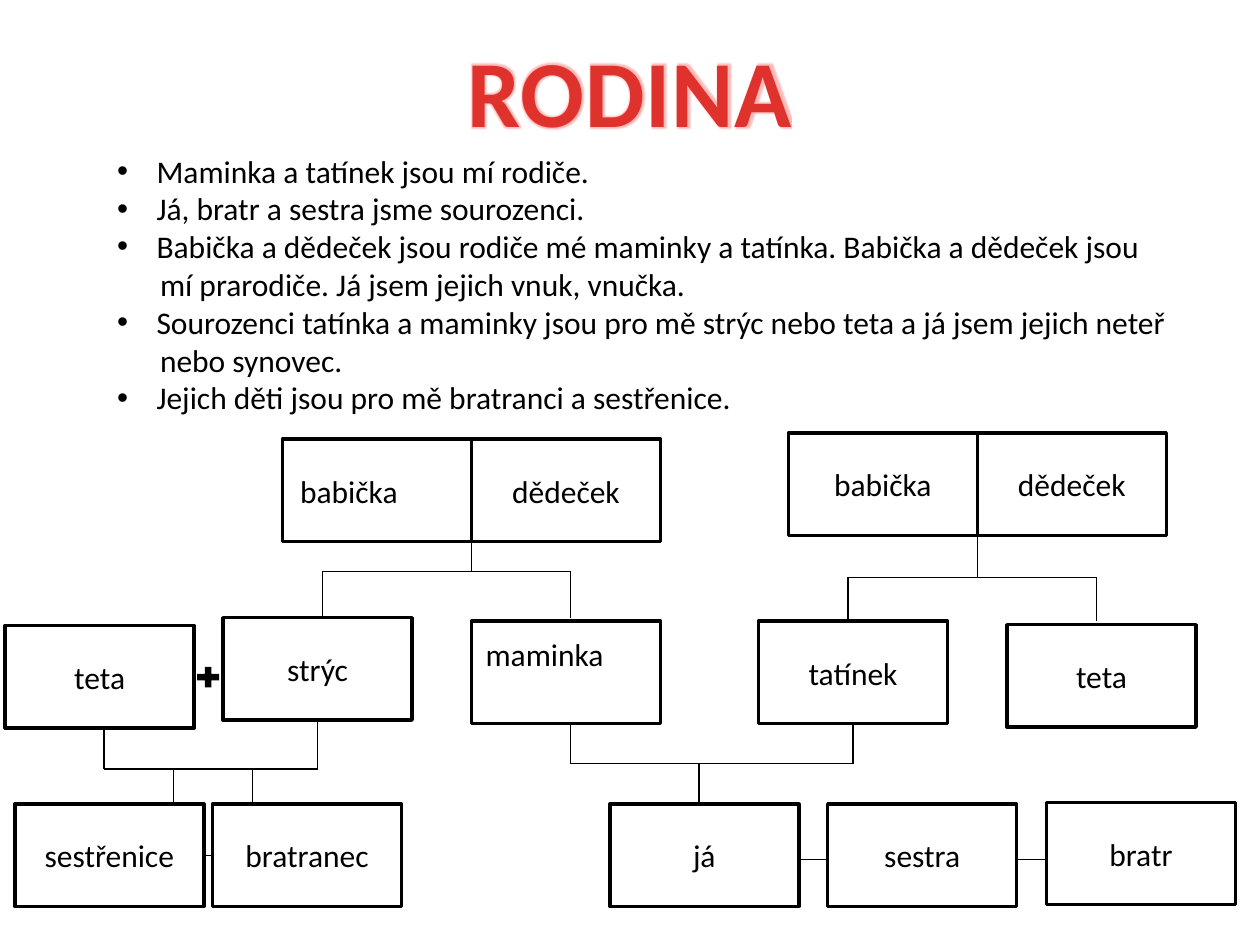
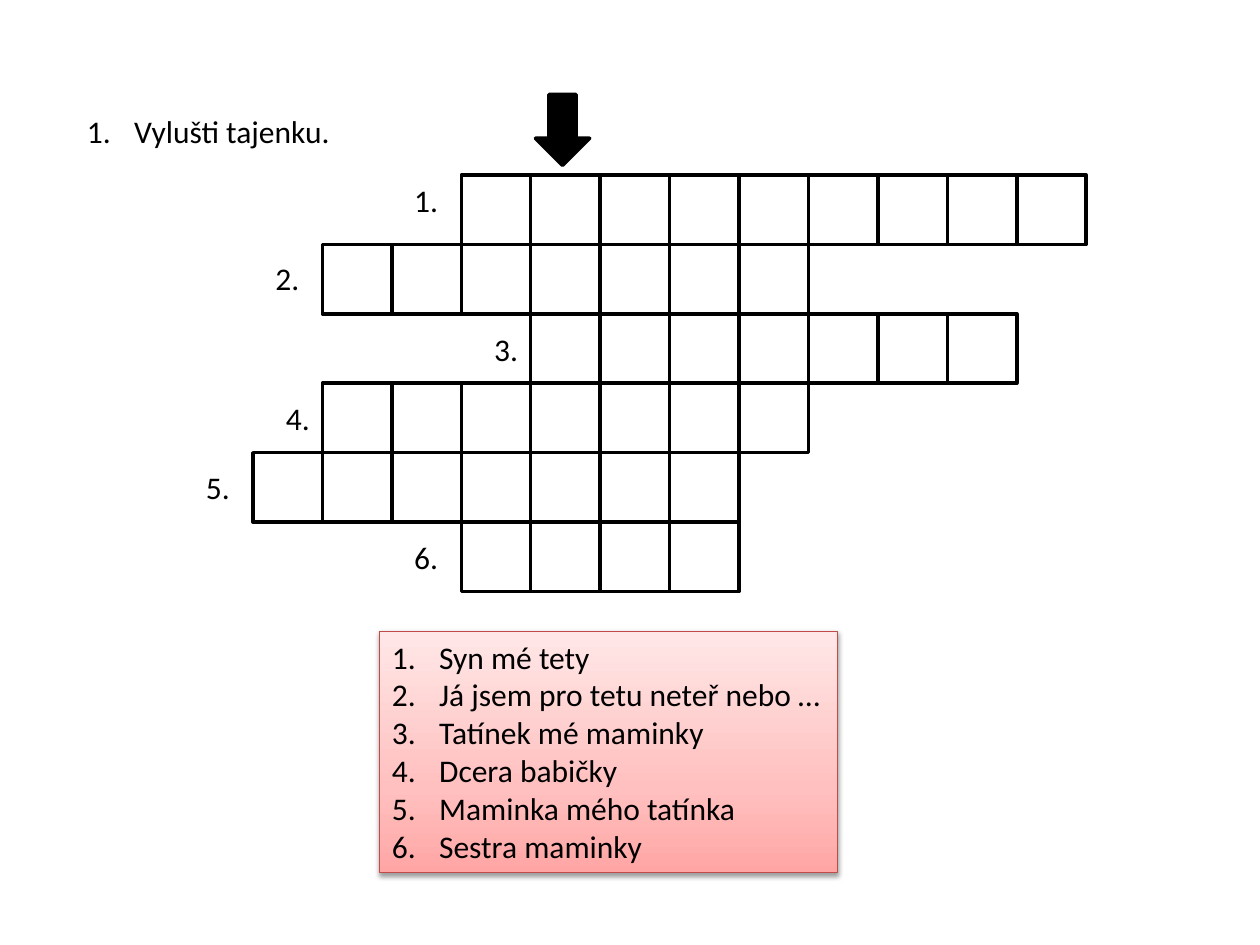
from lxml.etree import SubElement
from pptx import Presentation
from pptx.dml.color import RGBColor
from pptx.enum.shapes import MSO_CONNECTOR, MSO_SHAPE
from pptx.enum.text import MSO_ANCHOR, MSO_AUTO_SIZE, PP_ALIGN
from pptx.oxml.ns import qn
from pptx.util import Pt

INK = {"black": "000000", "white": "FFFFFF", "red": "E0322D", "dark": "A2201C",
       "glow": "FF3A33", "rose": "FFA6A5", "pink": "FFC0BF", "pale": "FFE7E7",
       "edge": "BF4C48"}


class Deck:
    """Holds the shared style and the current slide."""

    def __init__(self):
        self.prs = Presentation()
        self.prs.slide_width, self.prs.slide_height = Pt(720), Pt(540)
        self.font, self.size = "Calibri", 18
        self.slide = None

    def page(self):
        self.slide = self.prs.slides.add_slide(self.prs.slide_layouts[1])

    def tint(self, name):
        return RGBColor.from_string(INK[name])

    def place(self, shape, x, y, w, h):
        shape.left, shape.top, shape.width, shape.height = Pt(x), Pt(y), Pt(w), Pt(h)

    def letter(self, shape, lines, align=PP_ALIGN.LEFT, anchor=MSO_ANCHOR.TOP,
               size=None, bold=False):
        frame = shape.text_frame
        frame.text = "\n".join(lines)
        frame.word_wrap = True
        frame.auto_size = MSO_AUTO_SIZE.NONE
        frame.vertical_anchor = anchor
        for par in frame.paragraphs:
            par.alignment = align
            par.space_before = Pt(0)
            for run in par.runs:
                run.font.name = self.font
                run.font.size = Pt(size or self.size)
                run.font.bold = bold
                run.font.color.rgb = self.tint("black")
        return frame

    def mark(self, par, indent, kind=None):
        props = par._p.get_or_add_pPr()
        props.set("marL", str(Pt(indent)))
        props.set("indent", str(-Pt(indent) if kind else 0))
        if kind == "dot":
            SubElement(props, qn("a:buFont"), typeface="Arial")
            SubElement(props, qn("a:buChar"), char="•")
        elif kind == "count":
            SubElement(props, qn("a:buFont"), typeface="+mj-lt")
            SubElement(props, qn("a:buAutoNum"), type="arabicPeriod")
        else:
            SubElement(props, qn("a:buNone"))

    def blend(self, fill, props, stops, angle):
        fill.gradient()
        fill.gradient_angle = angle
        grad = props.find(qn("a:gradFill"))
        bar = grad.find(qn("a:gsLst"))
        for stop in list(bar):
            bar.remove(stop)
        for pos, name in stops:
            stop = SubElement(bar, qn("a:gs"), pos=str(pos * 1000))
            SubElement(stop, qn("a:srgbClr"), val=INK[name])
        return grad

    def effect(self, props, kind, name, alpha, **size):
        group = SubElement(props, qn("a:effectLst"))
        item = SubElement(group, qn("a:" + kind), **size)
        color = SubElement(item, qn("a:srgbClr"), val=INK[name])
        SubElement(color, qn("a:alpha"), val=str(alpha * 1000))
        return group

    def title(self, text, area, **style):
        shape = self.slide.shapes.title
        self.place(shape, *area)
        return self.letter(shape, [text], **style).paragraphs[0]

    def banner(self, text, area):
        par = self.title(text, area, align=PP_ALIGN.CENTER, size=54, bold=True)
        font = par.runs[0].font
        props = par.runs[0]._r.get_or_add_rPr()
        props.set("spc", "50")
        grad = self.blend(font.fill, props, [(25, "red"), (100, "dark")], 270)
        grad.addnext(self.effect(props, "glow", "glow", 35, rad=str(Pt(3.6))))

    def listing(self, items, area, indent):
        shape = self.slide.placeholders[1]
        self.place(shape, *area)
        frame = self.letter(shape, [text for _, text in items])
        for par, (kind, _) in zip(frame.paragraphs, items):
            self.mark(par, indent if kind else indent + 2, kind)
        return shape

    def panel(self, shape):
        props = shape._element.spPr
        self.blend(shape.fill, props, [(0, "rose"), (35, "pink"), (100, "pale")], 90)
        shape.line.color.rgb = self.tint("edge")
        shape.line.width = Pt(0.75)
        self.effect(props, "outerShdw", "black", 38, blurRad=str(Pt(3.1)),
                    dist=str(Pt(1.6)), dir="5400000", rotWithShape="0")

    def form(self, kind, x, y, w, h, fill=None, line=2):
        shape = self.slide.shapes.add_shape(kind, Pt(x), Pt(y), Pt(w), Pt(h))
        shape.shadow.inherit = False
        if fill:
            shape.fill.solid()
            shape.fill.fore_color.rgb = self.tint(fill)
        else:
            shape.fill.background()
        if line:
            shape.line.color.rgb = self.tint("black")
            shape.line.width = Pt(line)
        else:
            shape.line.fill.background()
        return shape

    def box(self, text, x, y, left=None, lift=0):
        shape = self.form(MSO_SHAPE.RECTANGLE, x, y, 108, 58.5, "white")
        align = PP_ALIGN.LEFT if left else PP_ALIGN.CENTER
        frame = self.letter(shape, [text], align, MSO_ANCHOR.MIDDLE)
        frame.margin_left = Pt(left or 7.2)
        frame.margin_bottom = Pt(3.6 + lift)

    def label(self, text, x, y):
        shape = self.slide.shapes.add_textbox(Pt(x), Pt(y), Pt(28), Pt(29))
        self.letter(shape, [text])

    def line(self, x1, y1, x2, y2):
        link = self.slide.shapes.add_connector(
            MSO_CONNECTOR.STRAIGHT, Pt(x1), Pt(y1), Pt(x2), Pt(y2))
        link.line.color.rgb = self.tint("black")
        link.line.width = Pt(0.75)
        SubElement(link._element.spPr, qn("a:effectLst"))

    def fork(self, y, ups, downs, top, end):
        ends = ups + downs
        self.line(min(ends), y, max(ends), y)
        for x in ups:
            self.line(x, top, x, y)
        for x in downs:
            self.line(x, y, x, end)


def family(deck):
    deck.page()
    deck.banner("RODINA", (230, 15, 260, 73))
    deck.listing([
        ("dot", "Maminka a tatínek jsou mí rodiče."),
        ("dot", "Já, bratr a sestra jsme sourozenci."),
        ("dot", "Babička a dědeček jsou rodiče mé maminky a tatínka. "
                "Babička a dědeček jsou"),
        (None, "mí prarodiče. Já jsem jejich vnuk, vnučka."),
        ("dot", "Sourozenci tatínka a maminky jsou pro mě strýc nebo teta "
                "a já jsem jejich neteř"),
        (None, "nebo synovec."),
        ("dot", "Jejich děti jsou pro mě bratranci a sestřenice."),
    ], (59.75, 83, 640, 181), 22.5)

    deck.fork(326.5, [269.5], [184.5, 326], 309, 353)
    deck.fork(330, [558.5], [484.5, 626.5], 306, 355)
    deck.fork(439.5, [59.5, 181.5], [99, 144.5], 412, 459)
    deck.fork(436.5, [326, 487.5], [399.5], 413, 459)
    for x1, x2, y in [(456, 473, 491), (581, 598, 491), (116, 122, 489)]:
        deck.line(x1, y, x2, y)

    deck.box("babička", 161.5, 251, left=10)
    deck.box("maminka", 269.5, 355, left=8, lift=21.6)
    for name, x, y in [
        ("dědeček", 269.5, 251), ("babička", 450.5, 247.5), ("dědeček", 558.5, 247.5),
        ("teta", 3, 357.5), ("strýc", 127.5, 353), ("tatínek", 433.5, 355),
        ("teta", 575.5, 357), ("sestřenice", 8.5, 459.5), ("bratranec", 121.5, 459.5),
        ("já", 348.5, 459.5), ("sestra", 473, 459.5), ("bratr", 598, 458.5),
    ]:
        deck.box(name, x, y)
    deck.form(MSO_SHAPE.MATH_PLUS, 110.5, 379, 17, 16, "black", 0)


def puzzle(deck):
    deck.page()
    task = deck.title("Vylušti tajenku.", (42.5, 60.5, 160, 29))
    deck.mark(task, 27, "count")
    clues = ["Syn mé tety", "Já jsem pro tetu neteř nebo …", "Tatínek mé maminky",
             "Dcera babičky", "Maminka mého tatínka", "Sestra maminky"]
    deck.panel(deck.listing([("count", clue) for clue in clues],
                            (216.75, 360.75, 262, 138), 27))

    side, left, top = 39.68, 144.6, 100
    rows = [(3, 9, 34, 0), (1, 7, 34, 5), (4, 7, 28, 5.5),
            (1, 7, 28, 5.5), (0, 7, 34, 5), (3, 4, 34, 5.5)]
    for row, (start, count, gap, drop) in enumerate(rows):
        y = top + row * side
        for col in range(start, start + count):
            deck.form(MSO_SHAPE.RECTANGLE, left + col * side, y, side, side)
        deck.label(f"{row + 1}.", left + start * side - gap, y + drop)
    deck.form(MSO_SHAPE.DOWN_ARROW, 306, 54, 31, 40.5, "black")


def main():
    deck = Deck()
    family(deck)
    puzzle(deck)
    deck.prs.save("out.pptx")


if __name__ == "__main__":
    main()
